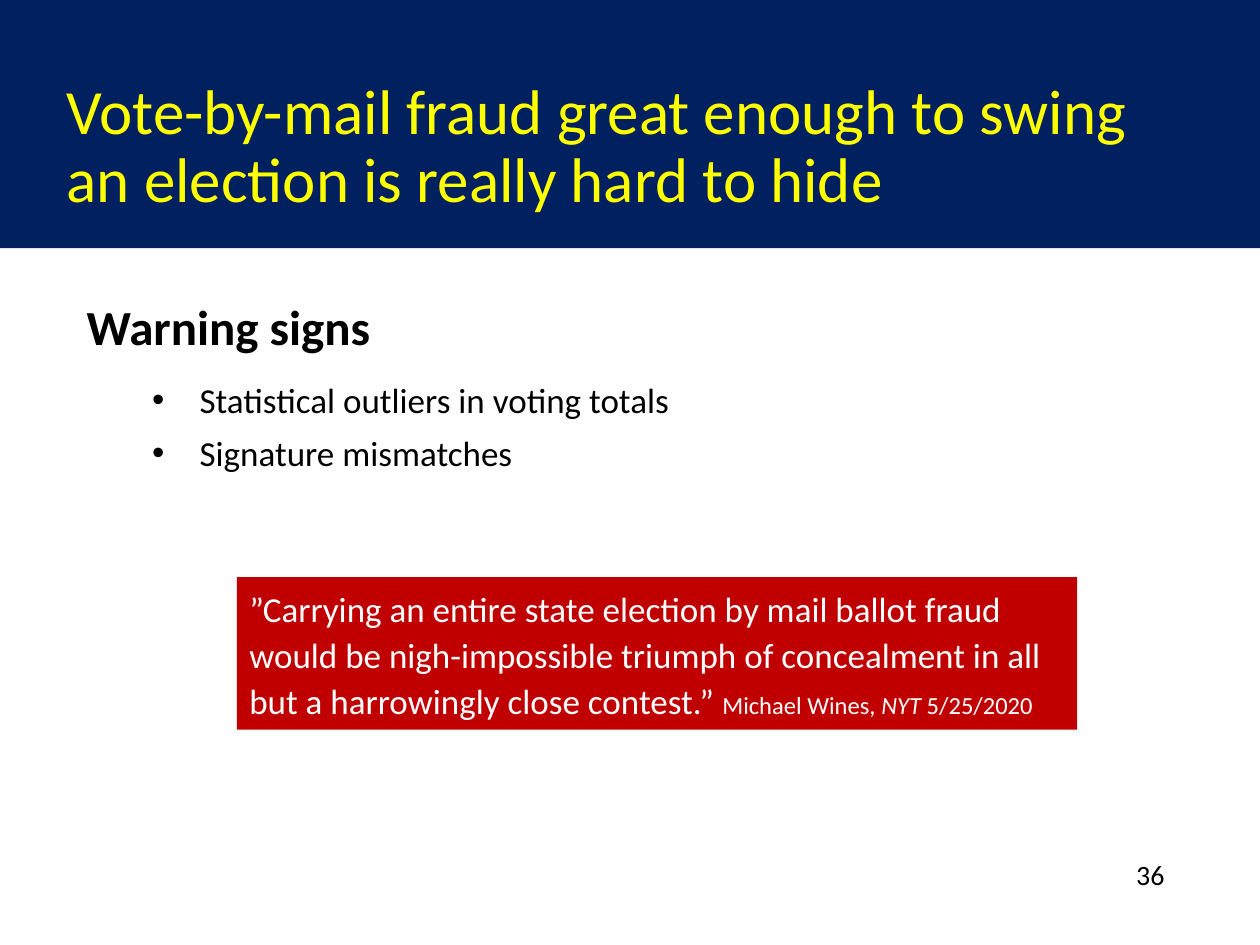
from lxml import etree
from pptx import Presentation
from pptx.dml.color import RGBColor
from pptx.enum import shapes, text
from pptx.oxml.ns import qn
from pptx.util import Pt

NAVY = RGBColor(0x00, 0x20, 0x60)
YELLOW = RGBColor(0xFF, 0xFF, 0x00)
RED = RGBColor(0xC0, 0x00, 0x00)
BLACK = RGBColor(0x00, 0x00, 0x00)
WHITE = RGBColor(0xFF, 0xFF, 0xFF)
LEFT = text.PP_ALIGN.LEFT
RIGHT = text.PP_ALIGN.RIGHT
TOP = text.MSO_ANCHOR.TOP
MIDDLE = text.MSO_ANCHOR.MIDDLE


def bullet(para, indent):
    props = para._p.get_or_add_pPr()
    props.set("marL", str(Pt(indent)))
    props.set("indent", str(-Pt(indent)))
    etree.SubElement(props, qn("a:buFont")).set("typeface", "Arial")
    etree.SubElement(props, qn("a:buChar")).set("char", "•")


def write(shape, lines, size=20, color=BLACK, bold=False, align=LEFT,
          anchor=TOP, spacing=1.1, gap=0, indent=0):
    frame = shape.text_frame
    frame.word_wrap = True
    frame.vertical_anchor = anchor
    for i, line in enumerate(lines):
        para = frame.add_paragraph() if i else frame.paragraphs[0]
        para.alignment = align
        para.line_spacing = spacing
        if i:
            para.space_before = Pt(gap)
        if indent:
            bullet(para, indent)
        parts = [(line, {})] if isinstance(line, str) else line
        for words, look in parts:
            run = para.add_run()
            run.text = words
            font = run.font
            font.name = "Calibri"
            font.size = Pt(look.get("size", size))
            font.bold = bold
            font.italic = look.get("italic", False)
            font.color.rgb = color


def label(slide, x, y, w, h, lines, **look):
    box = slide.shapes.add_textbox(Pt(x), Pt(y), Pt(w), Pt(h))
    write(box, lines, **look)


def block(slide, x, y, w, h, fill):
    shape = slide.shapes.add_shape(
        shapes.MSO_SHAPE.RECTANGLE, Pt(x), Pt(y), Pt(w), Pt(h))
    shape.shadow.inherit = False
    shape.fill.solid()
    shape.fill.fore_color.rgb = fill
    shape.line.fill.background()
    return shape


def header(slide, x, y, w, h):
    block(slide, x, y, w, h, NAVY)
    label(slide, x + 31, y + 32.4, w - 94.3, h - 37.4,
          ["Vote-by-mail fraud great enough to swing an election is really hard to hide"],
          size=36, color=YELLOW, anchor=MIDDLE, spacing=0.9)


def signs(slide, x, y, w, h):
    label(slide, x, y, w, 42.5, ["Warning signs"], size=28, bold=True)
    label(slide, x + 37.4, y + 47.5, w - 37.4, h - 47.5,
          ["Statistical outliers in voting totals", "Signature mismatches"],
          gap=4, indent=27)


def quote(slide, x, y, w, h):
    small = {"size": 14}
    write(block(slide, x, y, w, h, RED), [[
        ("”Carrying an entire state election by mail ballot fraud would be "
         "nigh-impossible triumph of concealment in all but a harrowingly "
         "close contest.” ", {}),
        ("Michael Wines, ", small),
        ("NYT", {"size": 14, "italic": True}),
        (" 5/25/2020", small),
    ]], color=WHITE)


def folio(slide, x, y, w, h):
    label(slide, x, y, w, h, ["36"], size=16, align=RIGHT, spacing=1.0)


def main():
    deck = Presentation()
    deck.slide_width, deck.slide_height = Pt(720), Pt(540)
    slide = deck.slides.add_slide(deck.slide_layouts[6])
    header(slide, 0, 0, 720, 141.8)
    folio(slide, 625.7, 486.7, 46.8, 26.6)
    signs(slide, 42.5, 162.7, 446.4, 111.6)
    quote(slide, 135.4, 329.8, 480.2, 87.1)
    deck.save("out.pptx")


if __name__ == "__main__":
    main()
